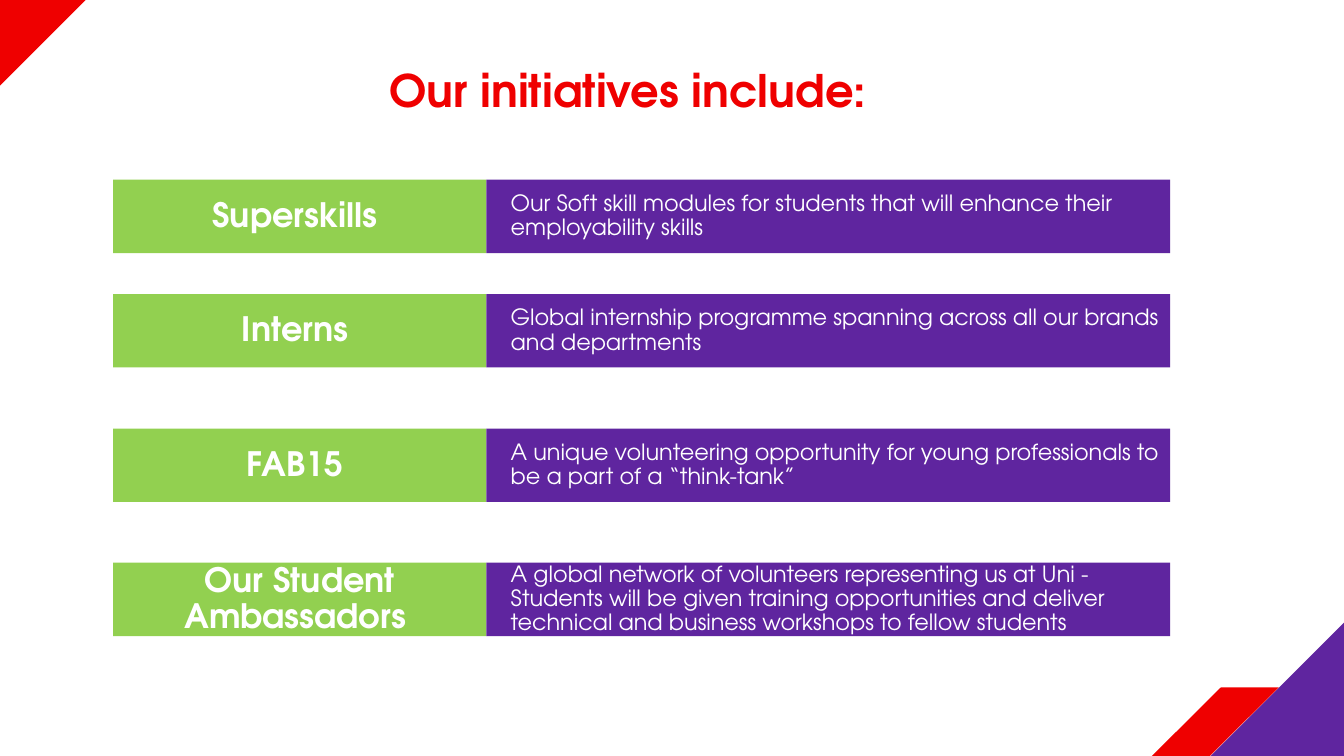
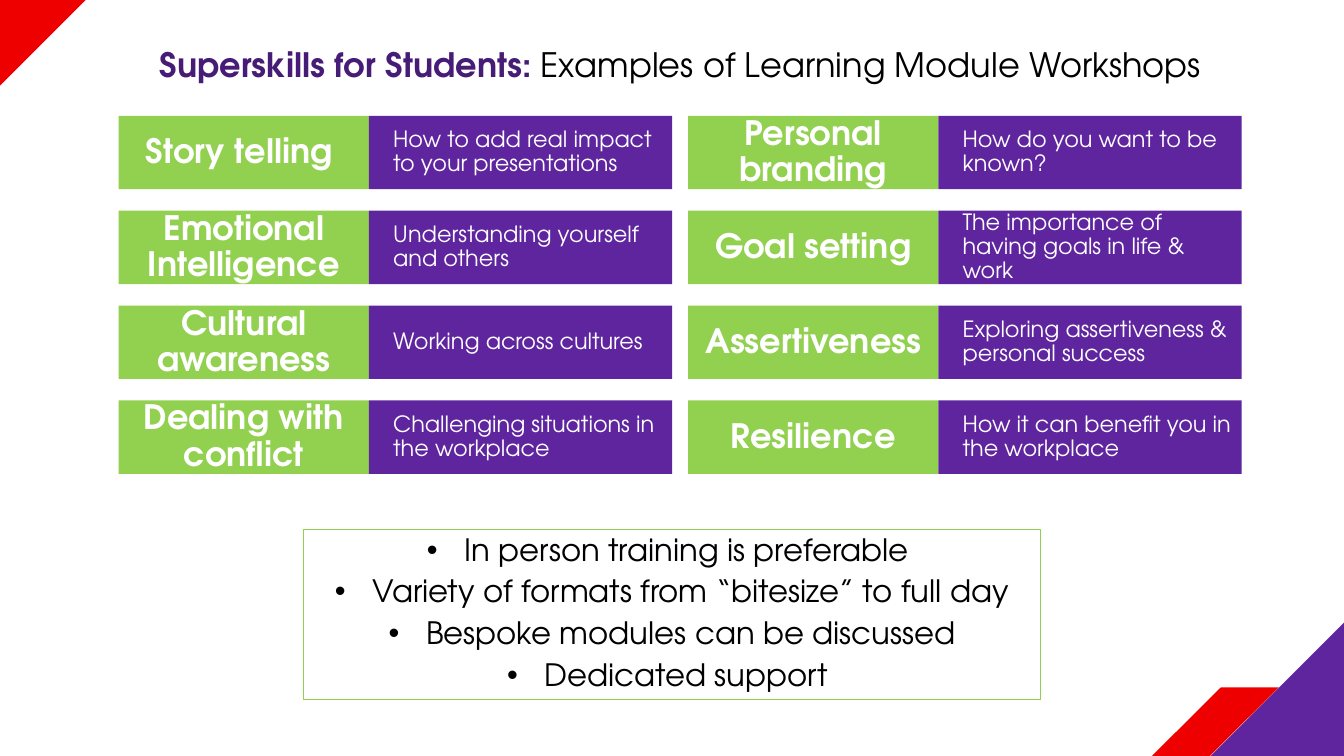
from dataclasses import dataclass

from lxml import etree
from pptx import Presentation
from pptx.dml.color import RGBColor
from pptx.enum.shapes import MSO_SHAPE
from pptx.enum.text import MSO_ANCHOR, PP_ALIGN
from pptx.oxml.ns import qn
from pptx.shapes.autoshape import Shape
from pptx.slide import Slide
from pptx.text.text import _Paragraph, _Run
from pptx.util import Cm, Pt

RECT = MSO_SHAPE.RECTANGLE
RIGHT_TRIANGLE = MSO_SHAPE.RIGHT_TRIANGLE
PARALLELOGRAM = MSO_SHAPE.PARALLELOGRAM
CENTER, LEFT = PP_ALIGN.CENTER, PP_ALIGN.LEFT
MIDDLE, TOP = MSO_ANCHOR.MIDDLE, MSO_ANCHOR.TOP


@dataclass(frozen=True)
class Theme:
    font: str = "TeX Gyre Adventor"
    red: RGBColor = RGBColor(0xEF, 0x00, 0x00)
    purple: RGBColor = RGBColor(0x5F, 0x25, 0x9F)
    dark_purple: RGBColor = RGBColor(0x47, 0x1C, 0x77)
    green: RGBColor = RGBColor(0x92, 0xD0, 0x50)
    white: RGBColor = RGBColor(0xFF, 0xFF, 0xFF)
    black: RGBColor = RGBColor(0x00, 0x00, 0x00)
    title: int = 32
    label: int = 24
    bullet: int = 22
    detail: int = 16
    line_spacing: float = 0.9


@dataclass(frozen=True)
class Box:
    """A frame in centimetres."""
    left: float
    top: float
    width: float
    height: float


@dataclass(frozen=True)
class Entry:
    label: str
    detail: str


@dataclass(frozen=True)
class Column:
    """Horizontal measures shared by a stack of entries, in centimetres."""
    left: float
    label_width: float
    detail_width: float


THEME = Theme()
SLIDE_W, SLIDE_H = 33.87, 19.05
BAND_H = 1.85
RED_CORNER, PURPLE_CORNER = 2.16, 3.36

INITIATIVE_COLUMN = Column(2.85, 9.41, 17.23)
INITIATIVE_TOPS = (4.53, 7.41, 10.8, 14.18)
INITIATIVES = (
    Entry("Superskills ",
          "Our Soft skill modules for students that will enhance their employability skills"),
    Entry("Interns ",
          "Global internship programme spanning across all our brands and departments"),
    Entry("FAB15 ",
          "A unique volunteering opportunity for young professionals to be a part of a “think-tank”"),
    Entry("Our Student Ambassadors ",
          "A global network of volunteers representing us at Uni - Students will be given training "
          "opportunities and deliver technical and business workshops to fellow students"),
)

MODULE_TOPS = [2.92 + 2.39 * i for i in range(4)]
MODULE_COLUMNS = [Column(left, 6.31, 7.64) for left in (2.99, 17.34)]
MODULES = (
    (
        Entry("Story telling ", "How to add real impact to your presentations"),
        Entry("Emotional Intelligence", "Understanding yourself and others"),
        Entry("Cultural awareness", "Working across cultures"),
        Entry("Dealing with conflict", "Challenging situations in the workplace"),
    ),
    (
        Entry("Personal branding", "How do you want to be known?"),
        Entry("Goal setting", "The importance of having goals in life & work"),
        Entry("Assertiveness", "Exploring assertiveness & personal success"),
        Entry("Resilience", "How it can benefit you in the workplace"),
    ),
)
FORMATS = (
    "In person training is preferable ",
    "Variety of formats from “bitesize” to full day",
    "Bespoke modules can be discussed",
    "Dedicated support ",
)


def style_run(r: _Run, size: int, color: RGBColor, bold: bool = False) -> None:
    r.font.name = THEME.font
    r.font.size = Pt(size)
    r.font.bold = bold
    r.font.color.rgb = color


def add_shape(s: Slide, kind: MSO_SHAPE, box: Box, fill: RGBColor | None) -> Shape:
    sp = s.shapes.add_shape(kind, Cm(box.left), Cm(box.top), Cm(box.width), Cm(box.height))
    sp.shadow.inherit = False
    sp.line.fill.background()
    if fill is None:
        sp.fill.background()
    else:
        sp.fill.solid()
        sp.fill.fore_color.rgb = fill
    return sp


def add_text(s: Slide, box: Box, text: str, size: int, color: RGBColor,
             bold: bool = False) -> _Paragraph:
    sp = s.shapes.add_textbox(Cm(box.left), Cm(box.top), Cm(box.width), Cm(box.height))
    tf = sp.text_frame
    tf.word_wrap = True
    p = tf.paragraphs[0]
    p.text = text
    style_run(p.runs[0], size, color, bold)
    return p


def add_corners(s: Slide) -> None:
    """Draw the coloured corner pieces found on every slide."""
    red = add_shape(s, RIGHT_TRIANGLE, Box(0, 0, RED_CORNER, RED_CORNER), THEME.red)
    red.rotation = 90
    purple = add_shape(s, RIGHT_TRIANGLE,
                       Box(SLIDE_W - PURPLE_CORNER, SLIDE_H - PURPLE_CORNER,
                           PURPLE_CORNER, PURPLE_CORNER), THEME.purple)
    purple.rotation = 270
    stripe = add_shape(s, PARALLELOGRAM, Box(29.03, 17.32, 3.2, 1.73), THEME.red)
    stripe.adjustments[0] = 1.006


def add_band(s: Slide, box: Box, fill: RGBColor, text: str, size: int,
             align: PP_ALIGN, bold: bool = False) -> Shape:
    sp = add_shape(s, RECT, box, fill)
    tf = sp.text_frame
    tf.word_wrap = True
    tf.vertical_anchor = MIDDLE
    tf.text = text
    p = tf.paragraphs[0]
    p.alignment = align
    p.line_spacing = THEME.line_spacing
    style_run(p.runs[0], size, THEME.white, bold)
    return sp


def add_entries(s: Slide, column: Column, tops: tuple[float, ...] | list[float],
                entries: tuple[Entry, ...]) -> None:
    for top, entry in zip(tops, entries):
        add_band(s, Box(column.left, top, column.label_width, BAND_H),
                 THEME.green, entry.label, THEME.label, CENTER, bold=True)
        detail = add_band(s, Box(column.left + column.label_width, top,
                                 column.detail_width, BAND_H),
                          THEME.purple, entry.detail, THEME.detail, LEFT)
        detail.text_frame.margin_left = Cm(0.61)


def add_bullet(p: _Paragraph) -> None:
    indent = Cm(0.95)
    pPr = p._p.get_or_add_pPr()
    pPr.set("marL", str(indent))
    pPr.set("indent", str(-indent))
    etree.SubElement(pPr, qn("a:buFont"), typeface="Arial")
    etree.SubElement(pPr, qn("a:buChar"), char="•")


def add_bullet_box(s: Slide, box: Box, lines: tuple[str, ...]) -> None:
    sp = add_shape(s, RECT, box, None)
    sp.line.color.rgb = THEME.green
    sp.line.width = Pt(0.75)
    tf = sp.text_frame
    tf.word_wrap = True
    tf.vertical_anchor = TOP
    tf.text = "\n".join(lines)
    for p in tf.paragraphs:
        p.alignment = CENTER
        p.line_spacing = THEME.line_spacing
        p.space_after = Pt(6)
        add_bullet(p)
        style_run(p.runs[0], THEME.bullet, THEME.black)


def build_initiatives(s: Slide) -> None:
    p = add_text(s, Box(1.22, 1.6, 29.21, 1.9), "Our initiatives include:",
                 THEME.title, THEME.red, bold=True)
    p.alignment = CENTER
    p.line_spacing = THEME.line_spacing
    add_entries(s, INITIATIVE_COLUMN, INITIATIVE_TOPS, INITIATIVES)


def build_modules(s: Slide) -> None:
    for column, entries in zip(MODULE_COLUMNS, MODULES):
        add_entries(s, column, MODULE_TOPS, entries)
    p = add_text(s, Box(3.78, 0.97, 29.11, 1.27), "Superskills for Students: ",
                 THEME.label, THEME.dark_purple, bold=True)
    r = p.add_run()
    r.text = "Examples of Learning Module Workshops"
    style_run(r, THEME.label, THEME.black)
    add_bullet_box(s, Box(7.65, 13.35, 18.57, 4.29), FORMATS)


def main() -> None:
    prs = Presentation()
    prs.slide_width, prs.slide_height = Cm(SLIDE_W), Cm(SLIDE_H)
    blank = prs.slide_layouts[6]
    for build in (build_initiatives, build_modules):
        s = prs.slides.add_slide(blank)
        add_corners(s)
        build(s)
    prs.save("out.pptx")


if __name__ == "__main__":
    main()
